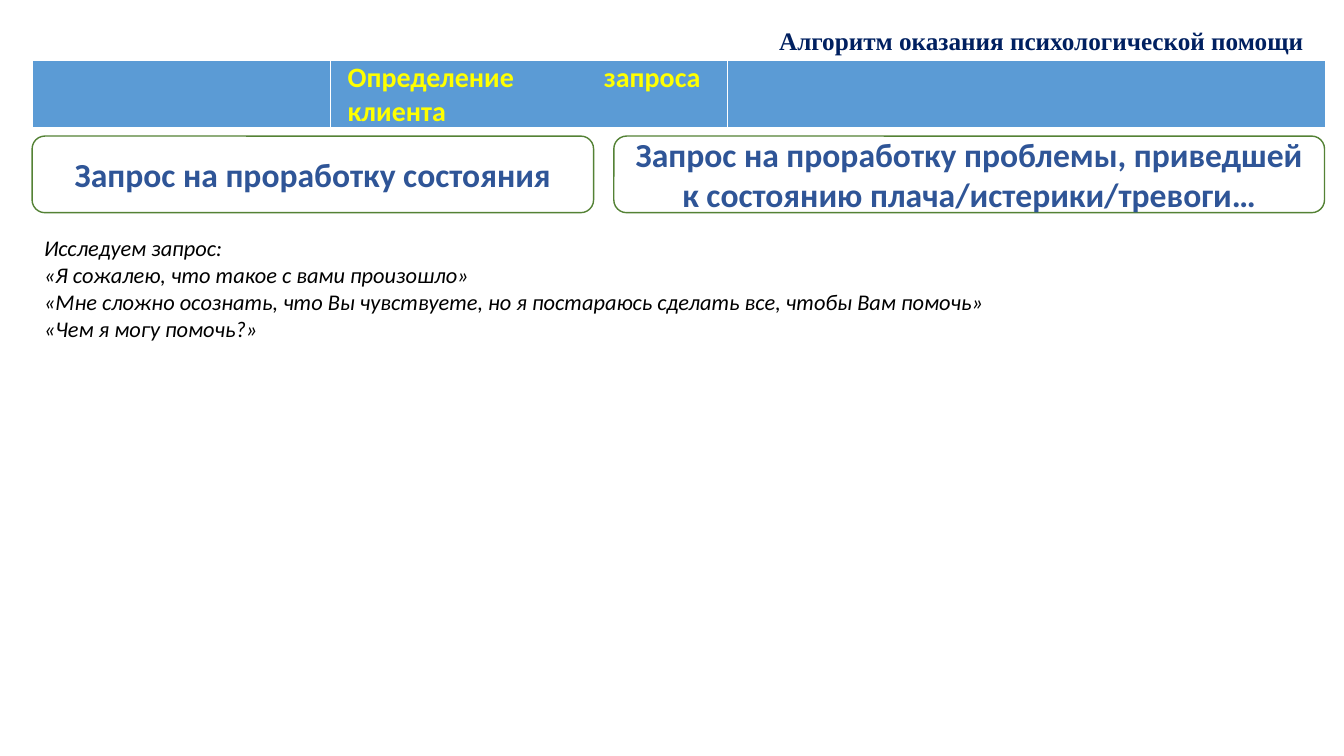
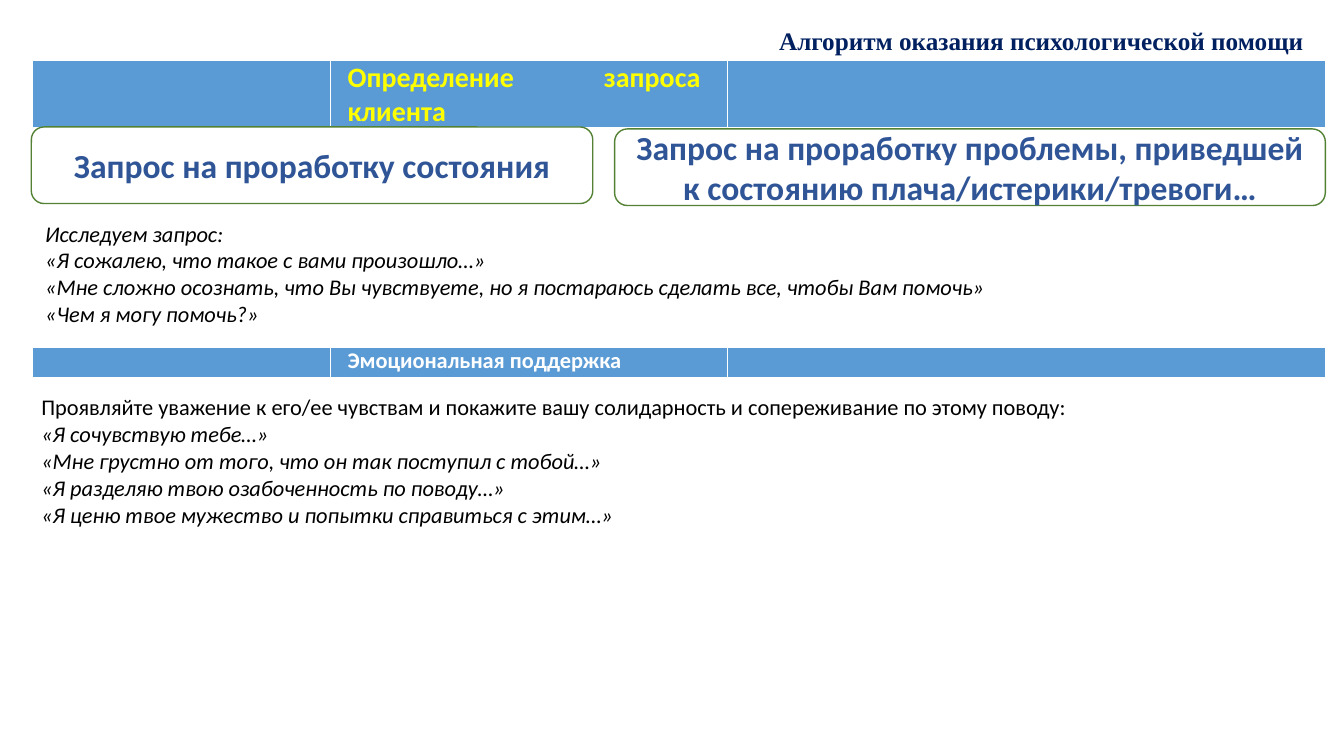
import pptx
import pptx.util
import pptx.dml.color
import pptx.enum.shapes
import pptx.enum.text
import pptx.oxml
import pptx.oxml.ns

Cm = pptx.util.Cm
Pt = pptx.util.Pt
RGBColor = pptx.dml.color.RGBColor
ALIGN = pptx.enum.text.PP_ALIGN
ANCHOR = pptx.enum.text.MSO_ANCHOR

NAVY = RGBColor(0x00, 0x20, 0x60)
BLUE = RGBColor(0x5B, 0x9B, 0xD5)
INK = RGBColor(0x2F, 0x55, 0x97)
GREEN = RGBColor(0x54, 0x82, 0x35)
GOLD = RGBColor(0xFF, 0xFF, 0x00)
WHITE = RGBColor(0xFF, 0xFF, 0xFF)
BLACK = RGBColor(0x00, 0x00, 0x00)

LEFT = 0.81
COLS = [7.52, 10.01, 15.06]
WIDE = sum(COLS)
EDGES = [("lnL", 1), ("lnR", 1), ("lnT", 1), ("lnB", 3)]
TITLE = "Алгоритм оказания психологической помощи"
ASK = "Определение запроса клиента"
CARDS = [
    ("Запрос на проработку состояния", 14.15),
    ("Запрос на проработку проблемы, приведшей к состоянию плача/истерики/тревоги…", 17.91),
]
HELP = [
    "«Мне сложно осознать, что Вы чувствуете, но я постараюсь сделать все, чтобы Вам помочь»",
    "«Чем я могу помочь?»",
]
CARE = [
    "Проявляйте уважение к его/ее чувствам и покажите вашу солидарность и сопереживание по этому поводу:",
    "«Я сочувствую тебе…»",
    "«Мне грустно от того, что он так поступил с тобой…»",
    "«Я разделяю твою озабоченность по поводу…»",
    "«Я ценю твое мужество и попытки справиться с этим…»",
]

PAGES = [
    {
        "layout": 1,
        "bands": [(1.52, 1.7, ASK, 20, GOLD)],
        "cards": [(0.81, 3.43), (15.47, 3.43)],
        "lists": [
            (0.81, 5.77, 26.47, 3, 0.3, ALIGN.JUSTIFY, 0,
             ["Исследуем запрос:", "«Я сожалею, что такое с вами произошло»"] + HELP),
        ],
    },
    {
        "layout": 3,
        "bands": [(1.52, 1.7, ASK, 20, GOLD), (8.76, 0.76, "Эмоциональная поддержка", 16, WHITE)],
        "cards": [(0.79, 3.2), (15.49, 3.25)],
        "lists": [
            (0.84, 5.41, 29.29, 3, 0.3, ALIGN.JUSTIFY, 0,
             ["Исследуем запрос:", "«Я сожалею, что такое с вами произошло…»"] + HELP),
            (0.79, 9.78, WIDE, 3.68, 0.25, ALIGN.LEFT, 1, CARE),
        ],
    },
]


def write(para, text, size, color, bold=False, slant=False, face="Calibri"):
    run = para.add_run()
    run.text = text
    run.font.name = face
    run.font.size = Pt(size)
    run.font.bold = bold
    run.font.italic = slant
    run.font.color.rgb = color


def place(shape, left, top, width, height):
    shape.left, shape.top = Cm(left), Cm(top)
    shape.width, shape.height = Cm(width), Cm(height)
    frame = shape.text_frame
    frame.word_wrap = True
    frame.auto_size = pptx.enum.text.MSO_AUTO_SIZE.NONE
    frame.vertical_anchor = ANCHOR.TOP
    return frame


deck = pptx.Presentation()
deck.slide_width = Cm(33.87)
deck.slide_height = Cm(19.05)

for page in PAGES:
    slide = deck.slides.add_slide(deck.slide_layouts[page["layout"]])

    frame = place(slide.shapes.title, 19.38, 0.51, 14.02, 1.02)
    para = frame.paragraphs[0]
    para.alignment = ALIGN.LEFT
    write(para, TITLE, 18, NAVY, bold=True, face="Times New Roman")

    for top, height, text, size, color in page["bands"]:
        table = slide.shapes.add_table(
            1, len(COLS), Cm(LEFT), Cm(top), Cm(WIDE), Cm(height)).table
        for col, width in zip(table.columns, COLS):
            col.width = Cm(width)
        for cell in table.rows[0].cells:
            cell.margin_left, cell.margin_right = Cm(0.43), Cm(0.69)
            cell.margin_top = cell.margin_bottom = 0
            cell.fill.solid()
            cell.fill.fore_color.rgb = BLUE
            props = cell._tc.get_or_add_tcPr()
            for spot, (edge, weight) in enumerate(EDGES):
                props.insert(spot, pptx.oxml.parse_xml(
                    f'<a:{edge} {pptx.oxml.ns.nsdecls("a")} w="{Pt(weight)}">'
                    f'<a:solidFill><a:srgbClr val="{WHITE}"/></a:solidFill></a:{edge}>'))
        para = table.cell(0, 1).text_frame.paragraphs[0]
        para.alignment = ALIGN.JUSTIFY
        write(para, text, size, color, bold=True)

    for (text, width), (left, top) in zip(CARDS, page["cards"]):
        card = slide.shapes.add_shape(
            pptx.enum.shapes.MSO_SHAPE.ROUNDED_RECTANGLE,
            Cm(left), Cm(top), Cm(width), Cm(1.93))
        card.shadow.inherit = False
        card.fill.solid()
        card.fill.fore_color.rgb = WHITE
        card.line.color.rgb = GREEN
        card.line.width = Pt(1)
        frame = card.text_frame
        frame.word_wrap = True
        frame.vertical_anchor = ANCHOR.MIDDLE
        para = frame.paragraphs[0]
        para.alignment = ALIGN.CENTER
        write(para, text, 24, INK, bold=True)

    for slot, (left, top, width, height, inset, align, plain, lines) in enumerate(page["lists"], 1):
        frame = place(slide.placeholders[slot], left, top, width, height)
        frame.margin_left = Cm(inset)
        for row, text in enumerate(lines):
            para = frame.add_paragraph() if row else frame.paragraphs[0]
            para.alignment = align
            para.space_before = Pt(0)
            props = para._p.get_or_add_pPr()
            props.set("marL", "0")
            props.set("indent", "0")
            props.append(pptx.oxml.parse_xml(f'<a:buNone {pptx.oxml.ns.nsdecls("a")}/>'))
            write(para, text, 16, BLACK, slant=row >= plain)

deck.save("out.pptx")
